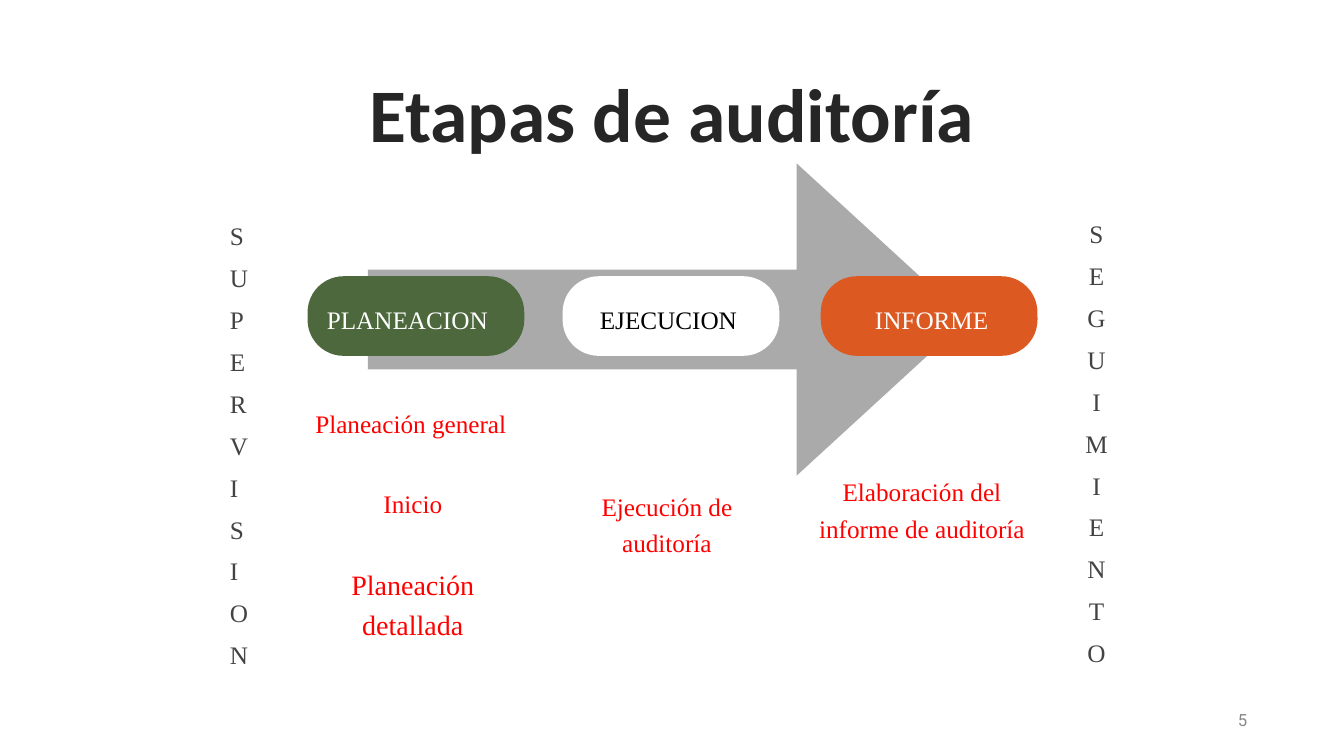
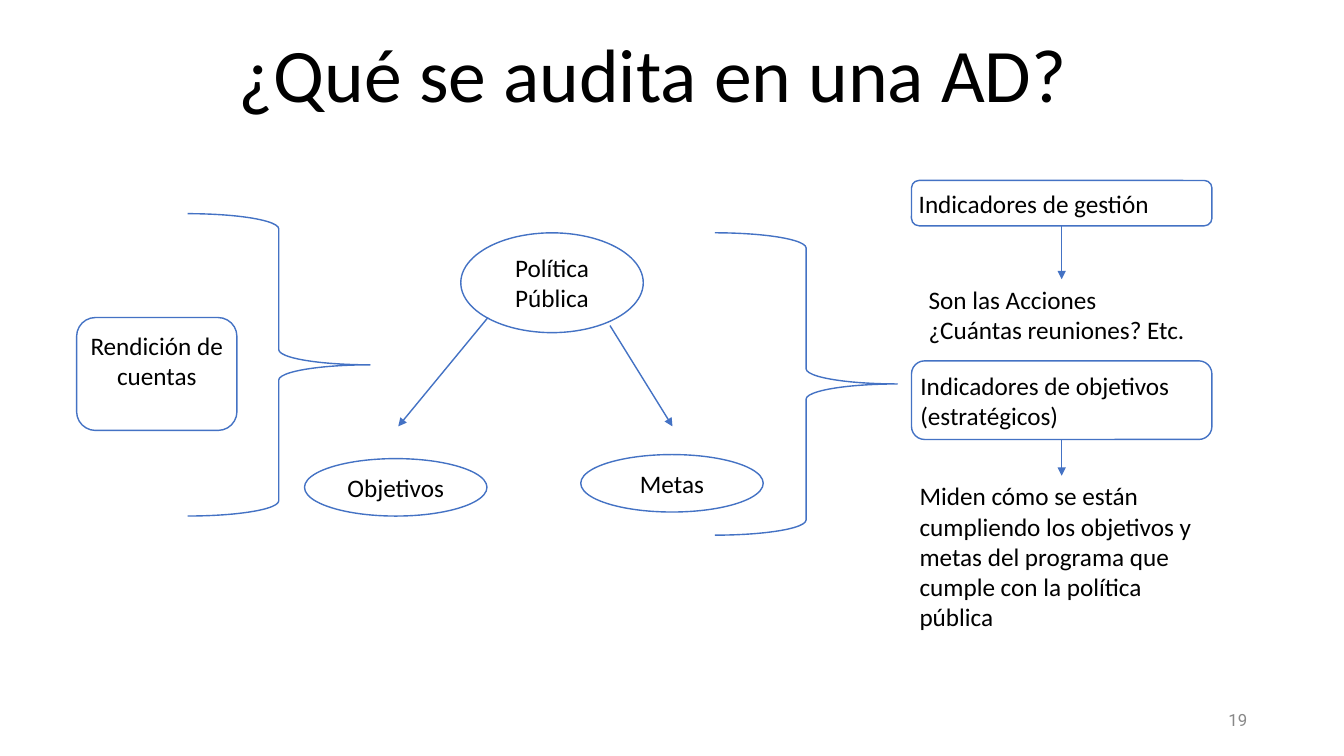
import pptx
import pptx.util
import pptx.dml.color
import pptx.enum.shapes
import pptx.enum.text
import lxml.etree

Inches = pptx.util.Inches
Pt = pptx.util.Pt
SHAPE = pptx.enum.shapes.MSO_SHAPE
ALIGN = pptx.enum.text.PP_ALIGN
ANCHOR = pptx.enum.text.MSO_ANCHOR

COLORS = {
    "white": "FFFFFF", "black": "000000", "title": "262626", "number": "888888",
    "letters": "434343", "arrow": "AAAAAA", "green": "4D683D", "orange": "DC5922",
    "pill_text": "FEFEFE", "red": "FF0000", "blue": "4472C4",
}
TITLE = {"size": 54, "align": ALIGN.CENTER, "insets": (0.1, 0.05, 0.1, 0.05), "wrap": False}
NUMBER = {"size": 12, "font": "Roboto", "color": "number", "align": ALIGN.RIGHT, "anchor": ANCHOR.MIDDLE}
SERIF = {"font": "Times New Roman", "align": ALIGN.CENTER, "insets": (0, 0, 0, 0), "spacing": 1.2, "after": 4}
OUTLINED = {"fill": "white", "line": "blue", "anchor": ANCHOR.MIDDLE}


def add_box(page, at, text="", shape=None, fill=None, line=None, adjust=(), size=18,
            font="Calibri", color="black", bold=False, align=ALIGN.LEFT, anchor=ANCHOR.TOP,
            insets=(0.05, 0.05, 0.05, 0.05), wrap=True, spacing=None, after=0):
    place = [Inches(value) for value in at]
    if shape is None:
        box = page.shapes.add_textbox(*place)
    else:
        box = page.shapes.add_shape(shape, *place)
        box.shadow.inherit = False
        for index, value in enumerate(adjust):
            box.adjustments[index] = value
        if fill:
            box.fill.solid()
            box.fill.fore_color.rgb = pptx.dml.color.RGBColor.from_string(COLORS[fill])
        else:
            box.fill.background()
        if line:
            box.line.color.rgb = pptx.dml.color.RGBColor.from_string(COLORS[line])
            box.line.width = Pt(1)
        else:
            box.line.fill.background()
    if not text:
        return box
    frame = box.text_frame
    frame.word_wrap = wrap
    frame.vertical_anchor = anchor
    frame.margin_left, frame.margin_top, frame.margin_right, frame.margin_bottom = map(Inches, insets)
    frame.text = text
    for para in frame.paragraphs:
        para.alignment = align
        para.space_after = Pt(after)
        if spacing:
            para.line_spacing = spacing
        for span in para.runs:
            span.font.name = font
            span.font.size = Pt(size)
            span.font.bold = bold
            span.font.color.rgb = pptx.dml.color.RGBColor.from_string(COLORS[color])
    return box


def add_arrow(page, start=(0, 0), end=(0, 0), source=None, target=None):
    arrow = page.shapes.add_connector(
        pptx.enum.shapes.MSO_CONNECTOR.STRAIGHT, *[Inches(value) for value in start + end])
    if source is not None:
        arrow.begin_connect(source, 2)
        arrow.end_connect(target, 0)
    arrow.line.color.rgb = pptx.dml.color.RGBColor.from_string(COLORS["blue"])
    arrow.line.width = Pt(1)
    properties = arrow.element.spPr
    head = lxml.etree.SubElement(arrow.line._get_or_add_ln(), pptx.oxml.ns.qn("a:tailEnd"))
    head.set("type", "triangle")
    lxml.etree.SubElement(properties, pptx.oxml.ns.qn("a:effectLst"))


deck = pptx.Presentation()
deck.slide_width = Inches(13.33)
deck.slide_height = Inches(7.5)

pages = []
for number in ("5", "19"):
    page = deck.slides.add_slide(deck.slide_layouts[6])
    add_box(page, (12.13, 7, 0.29, 0.29), number, **NUMBER)
    pages.append(page)
stages_page, scope_page = pages

add_box(stages_page, (3.52, 0.61, 6.29, 1.01), "Etapas de auditoría", color="title", bold=True, **TITLE)
for left, top, word, align in (
    (2.28, 2.13, "SUPERVISION", ALIGN.LEFT),
    (10.62, 2.11, "SEGUIMIENTO", ALIGN.CENTER),
):
    add_box(stages_page, (left, top, 0.51, 4.62), "\n".join(word),
            color="letters", **{**SERIF, "align": align})

add_box(stages_page, (3.65, 1.62, 5.94, 3.1), shape=SHAPE.RIGHT_ARROW, fill="arrow", adjust=(0.32, 0.545))
for left, stage, fill, color, insets in (
    (3.05, "PLANEACION", "green", "pill_text", (0, 0, 0.17, 0)),
    (5.58, "EJECUCION", "white", "black", (0, 0, 0.05, 0)),
    (8.14, "INFORME", "orange", "pill_text", (0.05, 0, 0, 0)),
):
    add_box(stages_page, (left, 2.74, 2.15, 0.79), stage, SHAPE.ROUNDED_RECTANGLE, fill,
            adjust=(0.454,), color=color, anchor=ANCHOR.MIDDLE,
            **{**SERIF, "insets": insets, "after": 0})

for left, top, height, step, size in (
    (2.96, 3.99, 0.58, "Planeación general", 18),
    (2.98, 4.78, 0.58, "Inicio", 18),
    (2.98, 5.56, 0.58, "Planeación detallada", 20),
    (5.5, 4.81, 0.58, "Ejecución de auditoría", 18),
    (8.03, 4.67, 0.87, "Elaboración del informe de auditoría", 18),
):
    add_box(stages_page, (left, top, 2.23, height), step, size=size, color="red", **SERIF)

add_box(scope_page, (2.22, 0.22, 8.51, 1.01), "¿Qué se audita en una AD?", **TITLE)
for left, top in ((1.86, 2.12), (7.09, 2.31)):
    add_box(scope_page, (left, top, 1.81, 3), shape=SHAPE.RIGHT_BRACE, line="blue")

for left, top, height, concept in (
    (4.57, 2.31, 0.99, "Política Pública"),
    (3.02, 4.55, 0.57, "Objetivos"),
    (5.76, 4.51, 0.57, "Metas"),
):
    add_box(scope_page, (left, top, 1.81, height), concept, SHAPE.OVAL, align=ALIGN.CENTER, **OUTLINED)
add_arrow(scope_page, (4.84, 3.15), (3.95, 4.23))
add_arrow(scope_page, (6.05, 3.23), (6.67, 4.23))

add_box(scope_page, (0.76, 3.15, 1.59, 1.12), "Rendición de cuentas", SHAPE.ROUNDED_RECTANGLE,
        align=ALIGN.CENTER, insets=(0.05, 0.07, 0.05, 0.05), **{**OUTLINED, "anchor": ANCHOR.TOP})

for top, height, indicator, detail_at, detail in (
    (1.79, 0.45, "Indicadores de gestión", (9.16, 2.77, 2.74, 0.71),
     "Son las Acciones\n¿Cuántas reuniones? Etc."),
    (3.58, 0.78, "Indicadores de objetivos (estratégicos)", (9.07, 4.72, 2.92, 1.62),
     "Miden cómo se están cumpliendo los objetivos y metas del programa que cumple con la política pública"),
):
    indicator_box = add_box(scope_page, (9.04, top, 2.98, height), indicator,
                            SHAPE.ROUNDED_RECTANGLE, **OUTLINED)
    detail_box = add_box(scope_page, detail_at, detail)
    add_arrow(scope_page, source=indicator_box, target=detail_box)

deck.save("out.pptx")
